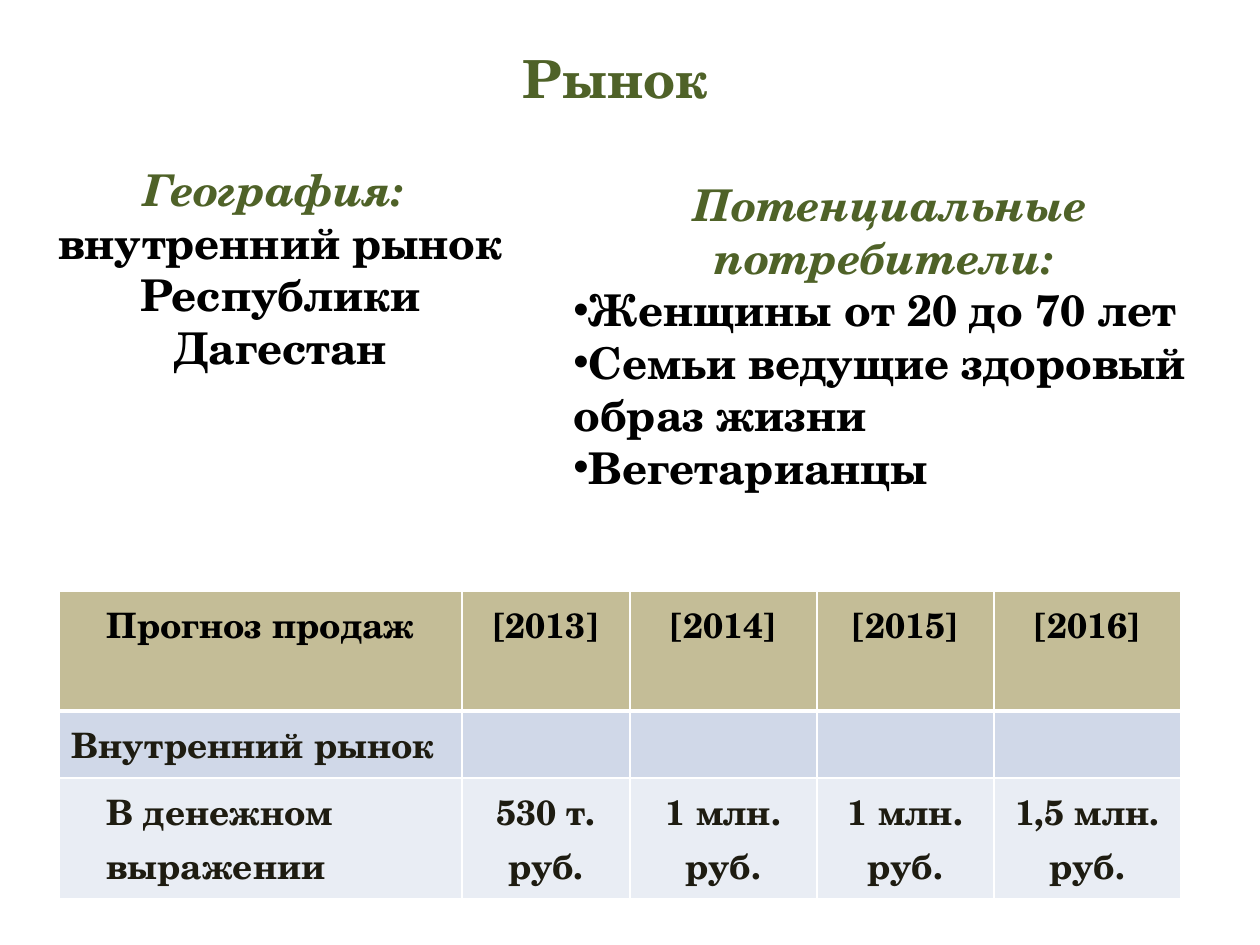
from pptx import Presentation
from pptx.dml.color import RGBColor
from pptx.enum.text import MSO_AUTO_SIZE as AutoSize, PP_ALIGN as Align
from pptx.oxml import parse_xml
from pptx.oxml.ns import nsdecls
from pptx.util import Pt

EMU_PER_PX = 914400 / 126
FONT = "TeX Gyre Schola"
COLORS = {
    "green": "4F6228", "black": "000000", "ink": "1E1C11", "white": "FFFFFF",
    "header": "C4BD97", "section": "D0D8E8", "data": "E9EDF4",
}

COLUMNS = [403, 168, 187, 177, 187]
# Height, fill, text colour, texts of each table row
ROWS = [
    (120, "header", "black",
     ["Прогноз продаж", "[2013]", "[2014]", "[2015]", "[2016]"]),
    (67, "section", "ink", ["Внутренний рынок", "", "", "", ""]),
    (121, "data", "ink",
     ["В денежном выражении", "530 т. руб.", "1 млн.\nруб.",
      "1 млн.\nруб.", "1,5 млн.\nруб."]),
]


def px(length):
    return round(length * EMU_PER_PX)


def rgb(name):
    return RGBColor.from_string(COLORS[name])


def style(para, size, color, align=Align.LEFT, italic=False):
    para.alignment = align
    font = para.font
    font.name, font.size = FONT, Pt(size)
    font.bold, font.italic = True, italic
    font.color.rgb = rgb(color)


def add_bullet(para):
    props = para._p.get_or_add_pPr()
    props.set("marL", "0")
    props.set("indent", "0")
    props.append(parse_xml(f'<a:buFont {nsdecls("a")} typeface="Arial"/>'))
    props.append(parse_xml(f'<a:buChar {nsdecls("a")} char="•"/>'))


def add_text(page, place, heading, size, body=(), italic=False, bulleted=False):
    """A centred green heading with black paragraphs under it."""
    frame = page.shapes.add_textbox(*map(px, place)).text_frame
    frame.word_wrap = True
    frame.auto_size = AutoSize.SHAPE_TO_FIT_TEXT
    para = frame.paragraphs[0]
    para.text = heading
    style(para, size, "green", Align.CENTER, italic)
    for text in body:
        para = frame.add_paragraph()
        para.text = text
        style(para, size, "black", Align.LEFT if bulleted else Align.CENTER)
        if bulleted:
            add_bullet(para)


def add_borders(cell, top, bottom):
    props = cell._tc.get_or_add_tcPr()
    for side, width in (("L", 1), ("R", 1), ("T", top), ("B", bottom)):
        props.append(parse_xml(
            f'<a:ln{side} {nsdecls("a")} w="{Pt(width)}"><a:solidFill>'
            f'<a:srgbClr val="{COLORS["white"]}"/></a:solidFill></a:ln{side}>'))


def add_forecast(page, left, top):
    height = sum(row[0] for row in ROWS)
    table = page.shapes.add_table(
        len(ROWS), len(COLUMNS),
        *map(px, (left, top, sum(COLUMNS), height))).table
    for column, width in zip(table.columns, COLUMNS):
        column.width = px(width)
    for r, (row_height, fill, color, texts) in enumerate(ROWS):
        table.rows[r].height = px(row_height)
        for c, text in enumerate(texts):
            cell = table.cell(r, c)
            # The line under the header row is thicker
            add_borders(cell, 3 if r == 1 else 1, 3 if r == 0 else 1)
            cell.fill.solid()
            cell.fill.fore_color.rgb = rgb(fill)
            cell.text = text
            for para in cell.text_frame.paragraphs:
                centred = r == 0 or c > 0
                style(para, 20, color, Align.CENTER if centred else Align.LEFT)
    # The data row is indented below its section
    detail = table.cell(2, 0).text_frame.paragraphs[0]
    detail.level = 1
    props = detail._p.get_or_add_pPr()
    props.set("marL", str(px(35)))
    props.set("indent", "0")


def main():
    deck = Presentation()
    deck.slide_width, deck.slide_height = px(1260), px(945)
    page = deck.slides.add_slide(deck.slide_layouts[6])

    # Sales forecast
    add_forecast(page, 59, 591)

    # Title
    add_text(page, (50, 40, 1131, 77), "Рынок", 30)

    # Geography and customers
    add_text(page, (39, 157, 483, 224), "География: ", 25,
             ["внутренний рынок Республики Дагестан"], italic=True)
    add_text(page, (561, 172, 659, 331), "Потенциальные потребители: ", 25,
             ["Женщины от 20 до 70 лет", "Семьи ведущие здоровый образ жизни",
              "Вегетарианцы"], italic=True, bulleted=True)

    deck.save("out.pptx")


if __name__ == "__main__":
    main()
